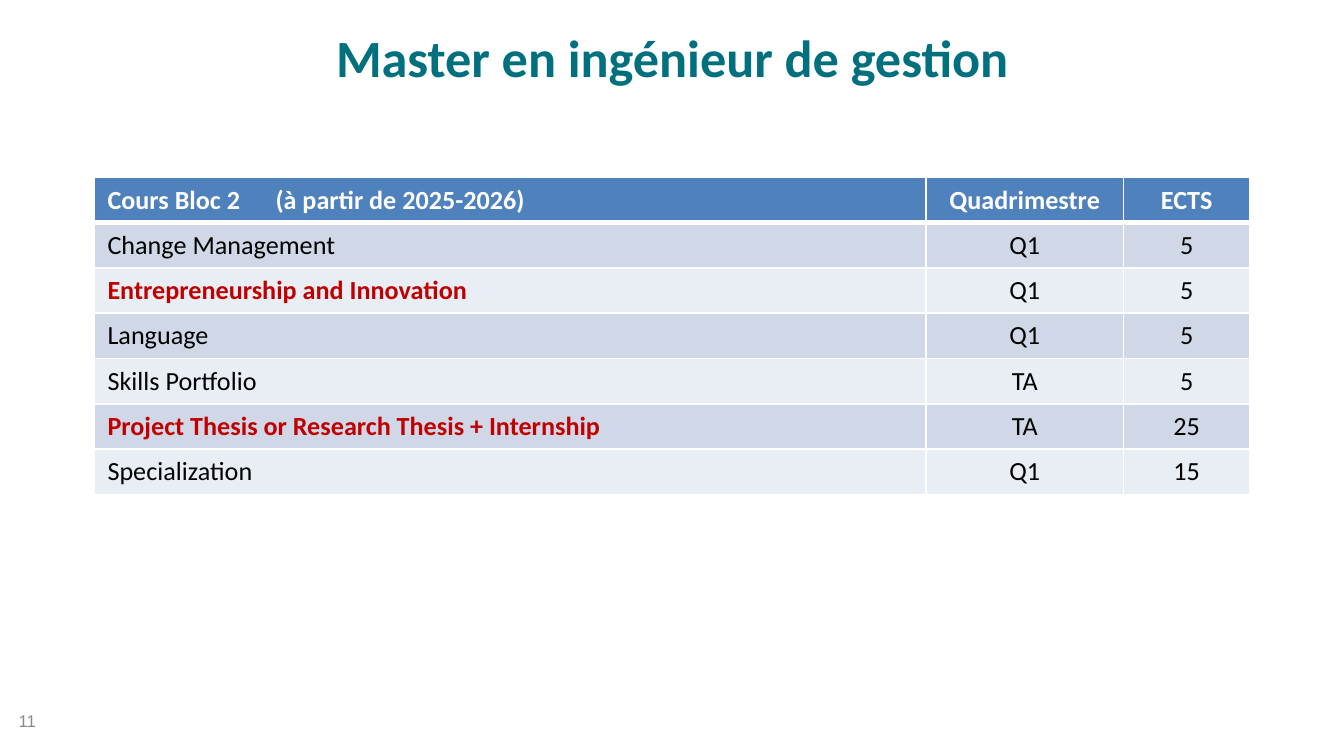
from lxml.etree import SubElement
from pptx import Presentation
from pptx.dml.color import RGBColor
from pptx.enum.text import MSO_ANCHOR, PP_ALIGN
from pptx.oxml.ns import qn
from pptx.util import Inches, Pt

TEAL = RGBColor(0x00, 0x70, 0x7F)
BLUE = RGBColor(0x4F, 0x81, 0xBD)
BAND_DARK = RGBColor(0xD0, 0xD8, 0xE8)
BAND_LIGHT = RGBColor(0xE9, 0xED, 0xF4)
RED = RGBColor(0xC0, 0x00, 0x00)
BLACK = RGBColor(0x00, 0x00, 0x00)
WHITE = RGBColor(0xFF, 0xFF, 0xFF)
GRAY = RGBColor(0x89, 0x89, 0x89)

ROWS = [
    ("Cours Bloc 2\t(à partir de 2025-2026)", "Quadrimestre", "ECTS"),
    ("Change Management", "Q1", "5"),
    ("Entrepreneurship and Innovation", "Q1", "5"),
    ("Language", "Q1", "5"),
    ("Skills Portfolio", "TA", "5"),
    ("Project Thesis or Research Thesis + Internship", "TA", "25"),
    ("Specialization", "Q1", "15"),
]
RED_ROWS = (2, 5)
COL_WIDTHS = (6.19, 1.47, 0.94)
TABLE_HEIGHT = 2.36


def add_text(p, text, font, size, color, bold=False):
    r = p.add_run()
    r.text = text
    r.font.name = font
    r.font.size = Pt(size)
    r.font.bold = bold
    r.font.color.rgb = color


def add_border(cell, side, width):
    ln = SubElement(cell._tc.get_or_add_tcPr(), qn(f"a:ln{side}"), w=str(Pt(width)))
    fill = SubElement(ln, qn("a:solidFill"))
    SubElement(fill, qn("a:srgbClr"), val=str(WHITE))


prs = Presentation()
prs.slide_width = Inches(10)
prs.slide_height = Inches(10) * 9 // 16
s = prs.slides.add_slide(prs.slide_layouts[6])

for text, box, anchor, align, font, size, color, bold in (
    ("11", (0.04, 5.21, 2.33, 0.3), MSO_ANCHOR.MIDDLE, PP_ALIGN.LEFT,
     "Arial", 9, GRAY, False),
    ("Master en ingénieur de gestion", (0.5, 0.14, 9, 0.62), MSO_ANCHOR.TOP,
     PP_ALIGN.CENTER, "Calibri", 28, TEAL, True),
):
    sp = s.shapes.add_textbox(*[Inches(v) for v in box])
    tf = sp.text_frame
    tf.word_wrap = True
    tf.vertical_anchor = anchor
    p = tf.paragraphs[0]
    p.alignment = align
    add_text(p, text, font, size, color, bold)

table = s.shapes.add_table(
    len(ROWS), len(COL_WIDTHS), Inches(0.7), Inches(1.32),
    Inches(sum(COL_WIDTHS)), Inches(TABLE_HEIGHT),
).table
for col, width in zip(table.columns, COL_WIDTHS):
    col.width = Inches(width)

for i, values in enumerate(ROWS):
    for j, value in enumerate(values):
        cell = table.cell(i, j)
        for side in "LRTB":
            thick = (i, side) in ((0, "B"), (1, "T"))
            add_border(cell, side, 3 if thick else 1)
        cell.fill.solid()
        p = cell.text_frame.paragraphs[0]
        p.alignment = PP_ALIGN.CENTER if j else PP_ALIGN.LEFT
        if "\t" in value:
            tabs = SubElement(p._p.get_or_add_pPr(), qn("a:tabLst"))
            SubElement(tabs, qn("a:tab"), pos=str(Inches(1.25)), algn="l")
        highlight = i in RED_ROWS and j == 0
        if i == 0:
            cell.fill.fore_color.rgb = BLUE
            color = WHITE
        else:
            cell.fill.fore_color.rgb = BAND_DARK if i % 2 else BAND_LIGHT
            color = RED if highlight else BLACK
        add_text(p, value, "Calibri", 14, color, i == 0 or highlight)

prs.save("out.pptx")
